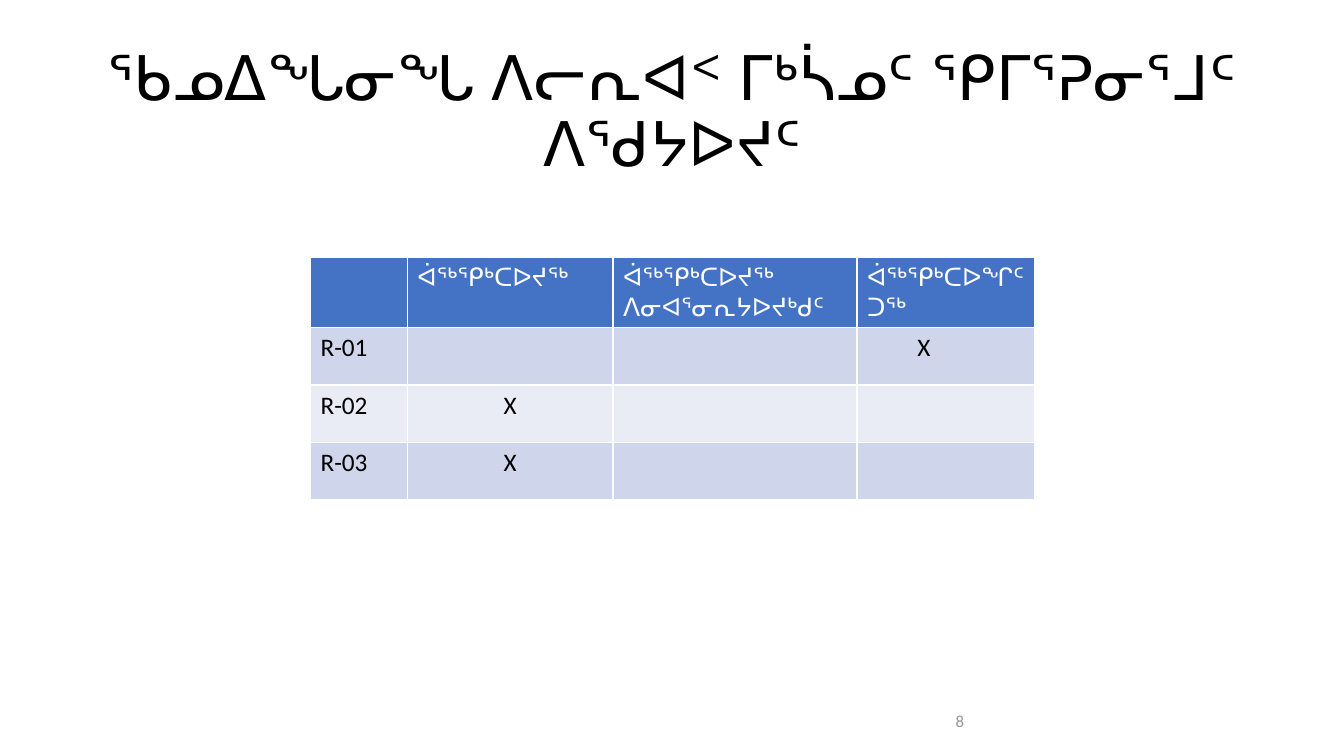
from dataclasses import dataclass

from pptx import Presentation
from pptx.dml.color import RGBColor as Rgb
from pptx.enum.text import MSO_ANCHOR as Anchor, MSO_AUTO_SIZE as AutoSize, PP_ALIGN as Align
from pptx.util import Inches, Pt


@dataclass(frozen=True)
class Theme:
    heading_font: str = "Arial"
    body_font: str = "Calibri"
    ink: str = "000000"
    paper: str = "FFFFFF"
    muted: str = "969696"
    header: str = "4472C4"
    bands: tuple[str, str] = ("CFD5EA", "E9EBF5")
    title_size: int = 44
    table_size: int = 18
    number_size: int = 12


@dataclass(frozen=True)
class Recommendation:
    code: str
    status: int
    mark_indent: float | None = None


THEME = Theme()
STATUSES = ["ᐋᖅᕿᒃᑕᐅᔪᖅ", "ᐋᖅᕿᒃᑕᐅᔪᖅ ᐱᓂᐊᕐᓂᕆᔭᐅᔪᒃᑯᑦ", "ᐋᖅᕿᒃᑕᐅᖏᑦᑐᖅ"]
RECOMMENDATIONS = [
    Recommendation("R-01", 3, mark_indent=0.6),
    Recommendation("R-02", 1),
    Recommendation("R-03", 1),
]
COLUMN_WIDTHS = [0.96, 2.04, 2.42, 1.76]
HEADER_HEIGHT, ROW_HEIGHT = 0.69, 0.57


def style(paragraph, font: str, size: int, color: str, align: Align = Align.LEFT) -> None:
    paragraph.alignment = align
    paragraph.font.name = font
    paragraph.font.size = Pt(size)
    paragraph.font.bold = False
    paragraph.font.color.rgb = Rgb.from_string(color)


def place_title(title, text: str) -> None:
    title.left, title.top = Inches(0.92), Inches(0.4)
    title.width, title.height = Inches(11.5), Inches(1.45)
    frame = title.text_frame
    frame.text = text
    frame.word_wrap = True
    frame.auto_size = AutoSize.NONE
    frame.vertical_anchor = Anchor.MIDDLE
    heading = frame.paragraphs[0]
    heading.line_spacing = 0.9
    style(heading, THEME.heading_font, THEME.title_size, THEME.ink, Align.CENTER)


def add_page_number(slide, number: str) -> None:
    frame = slide.shapes.add_textbox(Inches(8.83), Inches(7), Inches(0.83), Inches(0.33)).text_frame
    frame.text = number
    frame.word_wrap = True
    frame.vertical_anchor = Anchor.MIDDLE
    page = frame.paragraphs[0]
    page.line_spacing = 0.9
    style(page, THEME.body_font, THEME.number_size, THEME.muted, Align.RIGHT)


def fill_cell(cell, text: str, fill: str, color: str, align: Align = Align.LEFT) -> None:
    cell.fill.solid()
    cell.fill.fore_color.rgb = Rgb.from_string(fill)
    cell.text = text
    style(cell.text_frame.paragraphs[0], THEME.body_font, THEME.table_size, color, align)


def add_status_table(slide) -> None:
    height = HEADER_HEIGHT + ROW_HEIGHT * len(RECOMMENDATIONS)
    table = slide.shapes.add_table(
        len(RECOMMENDATIONS) + 1, len(COLUMN_WIDTHS),
        Inches(3.08), Inches(2.55), Inches(sum(COLUMN_WIDTHS)), Inches(height),
    ).table
    for column, width in zip(table.columns, COLUMN_WIDTHS):
        column.width = Inches(width)
    for index, row in enumerate(table.rows):
        row.height = Inches(ROW_HEIGHT if index else HEADER_HEIGHT)

    for column, status in enumerate(["", *STATUSES]):
        fill_cell(table.cell(0, column), status, THEME.header, THEME.paper)

    for index, item in enumerate(RECOMMENDATIONS):
        band = THEME.bands[index % 2]
        fill_cell(table.cell(index + 1, 0), item.code, band, THEME.ink)
        for column in range(1, len(COLUMN_WIDTHS)):
            mark = "X" if column == item.status else ""
            align = Align.CENTER if mark and item.mark_indent is None else Align.LEFT
            cell = table.cell(index + 1, column)
            fill_cell(cell, mark, band, THEME.ink, align)
            if mark and item.mark_indent is not None:
                cell.margin_left = Inches(item.mark_indent)


def main() -> None:
    deck = Presentation()
    deck.slide_width, deck.slide_height = Inches(13.33), Inches(7.5)
    slide = deck.slides.add_slide(deck.slide_layouts[5])
    place_title(slide.shapes.title, "ᖃᓄᐃᖓᓂᖓ ᐱᓕᕆᐊᑉ ᒥᒃᓵᓄᑦ ᕿᒥᕐᕈᓂᕐᒧᑦ ᐱᖁᔭᐅᔪᑦ")
    add_page_number(slide, "8")
    add_status_table(slide)
    deck.save("out.pptx")


if __name__ == "__main__":
    main()
